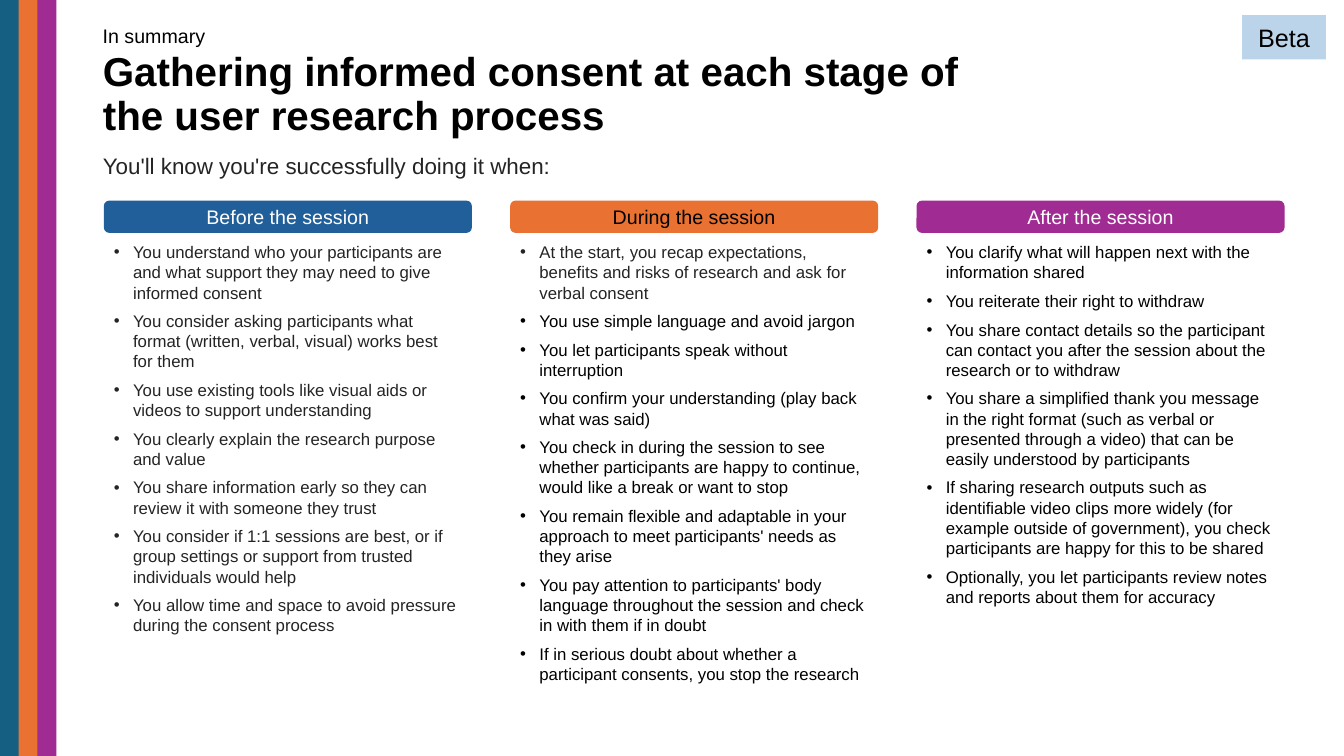
from lxml import etree
from pptx import Presentation, util as u
from pptx.dml.color import RGBColor
from pptx.enum import shapes, text
from pptx.oxml.ns import qn

BLACK = RGBColor(0x00, 0x00, 0x00)
WHITE = RGBColor(0xFF, 0xFF, 0xFF)
INK = RGBColor(0x24, 0x24, 0x24)
TEAL = RGBColor(0x15, 0x60, 0x82)
BLUE = RGBColor(0x21, 0x5F, 0x9A)
ORANGE = RGBColor(0xE9, 0x71, 0x32)
PURPLE = RGBColor(0xA0, 0x2B, 0x93)
PALE = RGBColor(0xBB, 0xD4, 0xEA)

WIDE, HIGH = 13.33, 7.5
LEFT, STEP, COL = 1.03, 4.03, 3.65
HEAD, LIST = 1.99, 2.35
MARGIN, BAND = 0.92, 0.185
INDENT = 0.19

STAGES = [
    ("Before the session", BLUE, WHITE, INK, INK, [
        "You understand who your participants are and what support they may need to give informed consent",
        "You consider asking participants what format (written, verbal, visual) works best for them",
        "You use existing tools like visual aids or videos to support understanding",
        "You clearly explain the research purpose and value",
        "You share information early so they can review it with someone they trust",
        "You consider if 1:1 sessions are best, or if group settings or support from trusted individuals would help",
        "You allow time and space to avoid pressure during the consent process",
    ]),
    ("During the session", ORANGE, BLACK, INK, BLACK, [
        "At the start, you recap expectations, benefits and risks of research and ask for verbal consent",
        "You use simple language and avoid jargon",
        "You let participants speak without interruption",
        "You confirm your understanding (play back what was said)",
        "You check in during the session to see whether participants are happy to continue, would like a break or want to stop",
        "You remain flexible and adaptable in your approach to meet participants' needs as they arise",
        "You pay attention to participants' body language throughout the session and check in with them if in doubt",
        "If in serious doubt about whether a participant consents, you stop the research",
    ]),
    ("After the session", PURPLE, WHITE, BLACK, BLACK, [
        "You clarify what will happen next with the information shared",
        "You reiterate their right to withdraw",
        "You share contact details so the participant can contact you after the session about the research or to withdraw",
        "You share a simplified thank you message in the right format (such as verbal or presented through a video) that can be easily understood by participants",
        "If sharing research outputs such as identifiable video clips more widely (for example outside of government), you check participants are happy for this to be shared",
        "Optionally, you let participants review notes and reports about them for accuracy",
    ]),
]


def assign(item, values):
    for name, value in values.items():
        setattr(item, name, value)


class Deck:
    """Holds the style and the current slide."""

    font = "Arial"
    frame = dict(word_wrap=True, auto_size=text.MSO_AUTO_SIZE.NONE)
    para = dict(alignment=text.PP_ALIGN.LEFT, space_before=u.Pt(0),
                space_after=u.Pt(0), line_spacing=1.0)

    def __init__(self):
        self.file = Presentation()
        assign(self.file, dict(slide_width=u.Inches(WIDE), slide_height=u.Inches(HIGH)))
        self.slide = self.file.slides.add_slide(self.file.slide_layouts.get_by_name("Comparison"))

    def letter(self, shape, lines, size, color, anchor=text.MSO_ANCHOR.TOP, bold=False, **para):
        """Set the text of a shape, one paragraph a line, and return the paragraphs."""
        body = shape.text_frame
        assign(body, dict(self.frame, vertical_anchor=anchor))
        body.text = "\n".join(lines)
        for p in body.paragraphs:
            assign(p, {**self.para, **para})
            for run in p.runs:
                assign(run.font, dict(name=self.font, size=u.Pt(size), bold=bold))
                run.font.color.rgb = color
        return body.paragraphs

    def place(self, index, box):
        """Move the placeholder with this index to a box given in inches."""
        holder = self.slide.placeholders[index]
        assign(holder, dict(zip(("left", "top", "width", "height"), map(u.Inches, box))))
        return holder

    def label(self, box, line, size, color):
        self.letter(self.slide.shapes.add_textbox(*map(u.Inches, box)), [line], size, color)

    def block(self, box, fill, kind=shapes.MSO_SHAPE.RECTANGLE, line=None, size=14, color=BLACK):
        shape = self.slide.shapes.add_shape(kind, *map(u.Inches, box))
        shape.shadow.inherit = False
        shape.fill.solid()
        shape.fill.fore_color.rgb = fill
        shape.line.fill.background()
        if line:
            self.letter(shape, [line], size, color, text.MSO_ANCHOR.MIDDLE,
                        alignment=text.PP_ALIGN.CENTER)

    def title(self, box, line):
        self.letter(self.place(0, box), [line], 28.8, BLACK, text.MSO_ANCHOR.MIDDLE,
                    True, line_spacing=0.9)

    def lead(self, box, line):
        for p in self.letter(self.place(1, box), [line], 16, INK, line_spacing=0.9):
            self.mark(p, 0)

    def points(self, index, box, lines, first, rest):
        paras = self.letter(self.place(index, box), lines, 12, rest, space_after=u.Pt(6))
        paras[0].runs[0].font.color.rgb = first
        for p in paras:
            self.mark(p, INDENT, "•")

    def mark(self, para, indent, sign=None):
        """Set the hanging indent, and a bullet if a sign is given."""
        props = para._p.get_or_add_pPr()
        props.set("marL", str(u.Inches(indent)))
        props.set("indent", str(-u.Inches(indent)))
        bullet = etree.SubElement(props, qn("a:buChar" if sign else "a:buNone"))
        if sign:
            bullet.set("char", sign)


def main():
    deck = Deck()
    deck.label((MARGIN, 0.19, 4.68, 0.34), "In summary", 14, BLACK)
    deck.block((12.32, 0.15, 0.83, 0.44), PALE, line="Beta", size=18)
    deck.title((MARGIN, 0.4, 11.3, 1.09),
               "Gathering informed consent at each stage of\vthe user research process")
    deck.lead((MARGIN, 1.49, 11.38, 0.4), "You'll know you're successfully doing it when:")
    for col, (name, fill, color, first, rest, lines) in enumerate(STAGES):
        left = LEFT + col * STEP
        deck.block((left, HEAD, COL, 0.32), fill, shapes.MSO_SHAPE.ROUNDED_RECTANGLE,
                   name, color=color)
        deck.points(col + 2, (left, LIST, COL, 4.66), lines, first, rest)
    for band, fill in enumerate((TEAL, ORANGE, PURPLE)):
        deck.block((band * BAND, 0, 0.19, HIGH), fill)
    deck.file.save("out.pptx")


if __name__ == "__main__":
    main()
